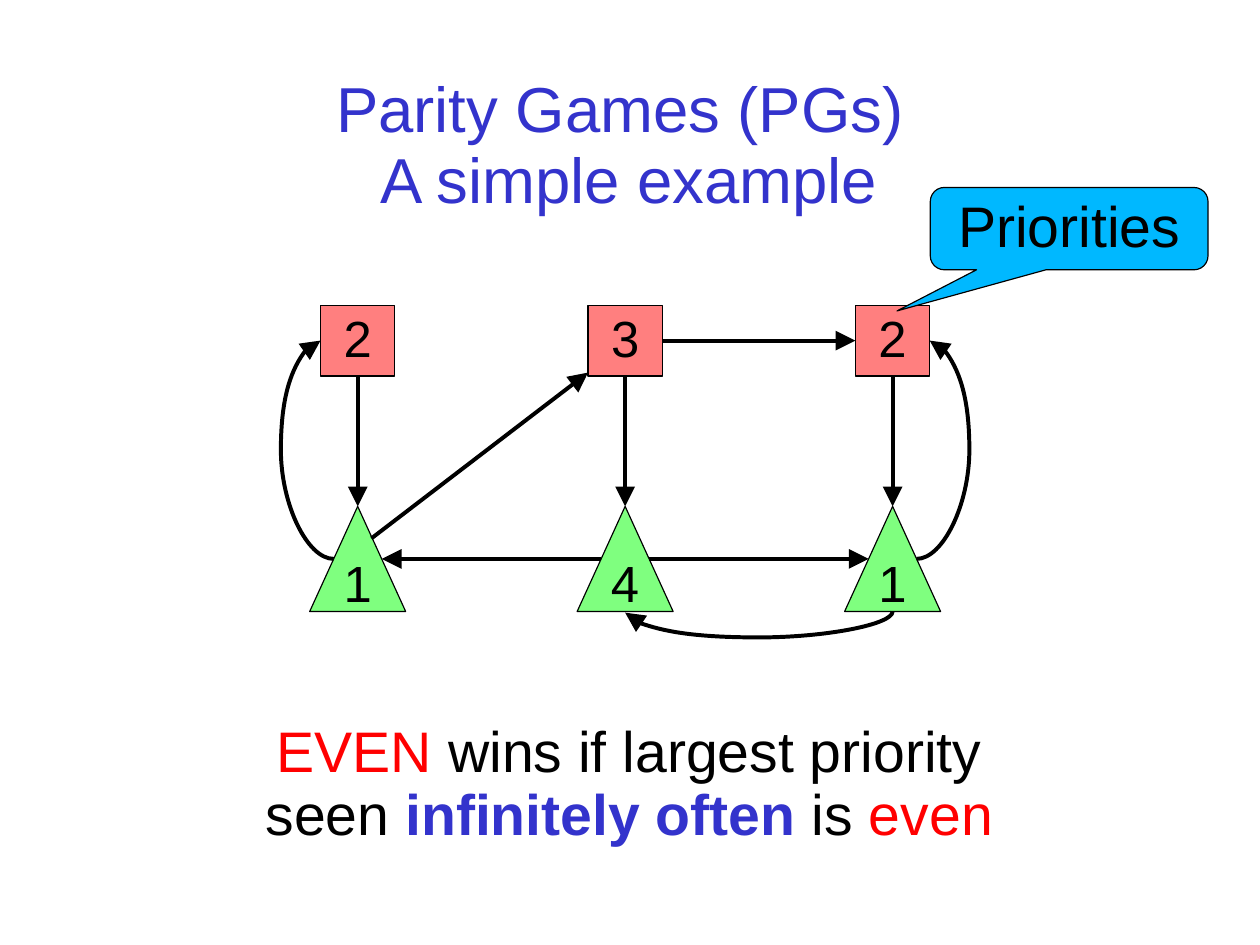
from dataclasses import dataclass

import pptx
import pptx.dml.color
import pptx.enum.shapes
import pptx.enum.text
import pptx.oxml.ns
import pptx.util
from lxml import etree

Inches = pptx.util.Inches
Pt = pptx.util.Pt
ShapeType = pptx.enum.shapes.MSO_SHAPE
ConnectorType = pptx.enum.shapes.MSO_CONNECTOR
qn = pptx.oxml.ns.qn


@dataclass(frozen=True)
class Theme:
    font: str = "Arial"
    black: str = "000000"
    blue: str = "3333CC"
    red: str = "FF0000"
    green: str = "00FF00"
    callout: str = "00B8FF"
    title_size: int = 40
    body_size: int = 36
    node_size: int = 32
    outline: float = 0.75
    arrow: float = 2.5
    line_spacing: float = 0.93
    node_opacity: int = 50


@dataclass(frozen=True)
class Box:
    left: float
    top: float
    width: float
    height: float

    @property
    def lengths(self):
        return [Inches(n) for n in (self.left, self.top, self.width, self.height)]

    @property
    def right(self):
        return self.left + self.width

    @property
    def bottom(self):
        return self.top + self.height

    @property
    def center(self):
        return self.left + self.width / 2

    @property
    def middle(self):
        return self.top + self.height / 2


THEME = Theme()


def rgb(color):
    return pptx.dml.color.RGBColor.from_string(color)


def format_run(run, size, color, bold=False):
    run.font.name = THEME.font
    run.font.size = Pt(size)
    run.font.bold = bold
    run.font.color.rgb = rgb(color)


def center_paragraph(paragraph):
    paragraph.alignment = pptx.enum.text.PP_ALIGN.CENTER
    paragraph.line_spacing = THEME.line_spacing


def set_text(text_frame, text, size, color):
    text_frame.text = text
    text_frame.vertical_anchor = pptx.enum.text.MSO_ANCHOR.MIDDLE
    for paragraph in text_frame.paragraphs:
        center_paragraph(paragraph)
        for run in paragraph.runs:
            format_run(run, size, color)


def add_filled_shape(slide, kind, box, text, size, color):
    shape = slide.shapes.add_shape(kind, *box.lengths)
    shape.shadow.inherit = False
    shape.fill.solid()
    shape.fill.fore_color.rgb = rgb(color)
    shape.line.color.rgb = rgb(THEME.black)
    shape.line.width = Pt(THEME.outline)
    set_text(shape.text_frame, text, size, THEME.black)
    return shape


def add_node(slide, kind, box, priority, color):
    shape = add_filled_shape(slide, kind, box, priority, THEME.node_size, color)
    shape.text_frame.word_wrap = False
    fill_color = shape._element.spPr.find(qn("a:solidFill"))[0]
    etree.SubElement(fill_color, qn("a:alpha"), val=str(THEME.node_opacity * 1000))


def add_arrow(slide, start, end, bend=None, rotation=0):
    """Draw an arrow; bend is how far a curve bulges, in multiples of its width."""
    kind = ConnectorType.STRAIGHT if bend is None else ConnectorType.CURVE
    connector = slide.shapes.add_connector(kind, *[Inches(n) for n in (*start, *end)])
    connector.line.color.rgb = rgb(THEME.black)
    connector.line.width = Pt(THEME.arrow)
    properties = connector._element.spPr
    etree.SubElement(properties.find(qn("a:ln")), qn("a:tailEnd"),
                     type="triangle", w="lg", len="lg")
    etree.SubElement(properties, qn("a:effectLst"))
    if bend is not None:
        guides = properties.find(qn("a:prstGeom")).get_or_add_avLst()
        etree.SubElement(guides, qn("a:gd"), name="adj1", fmla=f"val {round(bend * 100000)}")
    if rotation:
        properties.find(qn("a:xfrm")).set("rot", str(rotation * 60000))


def add_arch(slide, start, end, depth):
    """Draw an arrow that leaves downwards and hangs below its two ends."""
    drop = end[1] - start[1]
    span = start[0] - end[0]
    center, middle = (start[0] + end[0]) / 2, (start[1] + end[1]) / 2
    add_arrow(slide, (center - drop / 2, middle - span / 2),
              (center + drop / 2, middle + span / 2), depth / drop, rotation=90)


def add_title(slide, box):
    text_frame = slide.shapes.add_textbox(*box.lengths).text_frame
    text_frame.word_wrap = True
    text_frame.margin_left = text_frame.margin_right = 0
    text_frame.margin_top = text_frame.margin_bottom = 0
    set_text(text_frame, "Parity Games (PGs) \vA simple example", THEME.title_size, THEME.blue)


def add_game_graph(slide, box):
    square_width, square_height = 0.65, 0.62
    triangle_width, triangle_height = 0.84, 0.92
    gap = (box.width - triangle_width) / 2
    centers = [box.left + triangle_width / 2 + gap * column for column in range(3)]
    squares = [Box(x - square_width / 2, box.top, square_width, square_height) for x in centers]
    triangles = [Box(x - triangle_width / 2, box.bottom - triangle_height,
                     triangle_width, triangle_height) for x in centers]
    for square, priority in zip(squares, "232"):
        add_node(slide, ShapeType.RECTANGLE, square, priority, THEME.red)
    for triangle, priority in zip(triangles, "141"):
        add_node(slide, ShapeType.ISOSCELES_TRIANGLE, triangle, priority, THEME.green)

    for square, triangle in zip(squares, triangles):
        add_arrow(slide, (square.center, square.bottom), (triangle.center, triangle.top))

    side = triangle_width / 4
    left, center, right = triangles
    add_arrow(slide, (center.center - side, center.middle), (left.center + side, left.middle))
    add_arrow(slide, (center.center + side, center.middle), (right.center - side, right.middle))
    add_arrow(slide, (squares[1].right, squares[1].middle), (squares[2].left, squares[2].middle))
    add_arrow(slide, (left.center + 0.12, left.top + 0.28),
              (squares[1].left, squares[1].bottom - 0.03))

    loop_bend = 4.02
    add_arrow(slide, (left.center - side, left.middle),
              (squares[0].left, squares[0].middle), loop_bend)
    add_arrow(slide, (right.center + side, right.middle),
              (squares[2].right, squares[2].middle), loop_bend)
    add_arch(slide, (right.center, right.bottom), (center.center, center.bottom + 0.01), 0.23)


def add_winning_rule(slide, box):
    text_frame = slide.shapes.add_textbox(*box.lengths).text_frame
    text_frame.word_wrap = True
    paragraph = text_frame.paragraphs[0]
    center_paragraph(paragraph)
    lines = [
        [("EVEN", THEME.red, False), (" wins if largest priority", THEME.black, False)],
        [("seen ", THEME.black, False), ("infinitely often", THEME.blue, True),
         (" is ", THEME.black, False), ("even", THEME.red, False)],
    ]
    for number, line in enumerate(lines):
        if number:
            paragraph.add_line_break()
        for text, color, bold in line:
            run = paragraph.add_run()
            run.text = text
            format_run(run, THEME.body_size, color, bold)


def add_priorities_callout(slide, box):
    callout = add_filled_shape(slide, ShapeType.ROUNDED_RECTANGULAR_CALLOUT, box,
                               "Priorities", THEME.body_size, THEME.callout)
    for index, value in enumerate((-0.62, 1, 0.17)):
        callout.adjustments[index] = value


def main():
    presentation = pptx.Presentation()
    presentation.slide_width = pptx.util.Emu(10080625)
    presentation.slide_height = pptx.util.Emu(7559675)
    slide = presentation.slides.add_slide(presentation.slide_layouts[6])
    add_title(slide, Box(0.54, 0.88, 9.92, 0.81))
    add_game_graph(slide, Box(2.71, 2.67, 5.52, 2.68))
    add_winning_rule(slide, Box(1.83, 6.26, 7.35, 1.22))
    add_priorities_callout(slide, Box(8.14, 1.64, 2.43, 0.72))
    presentation.save("out.pptx")


if __name__ == "__main__":
    main()
